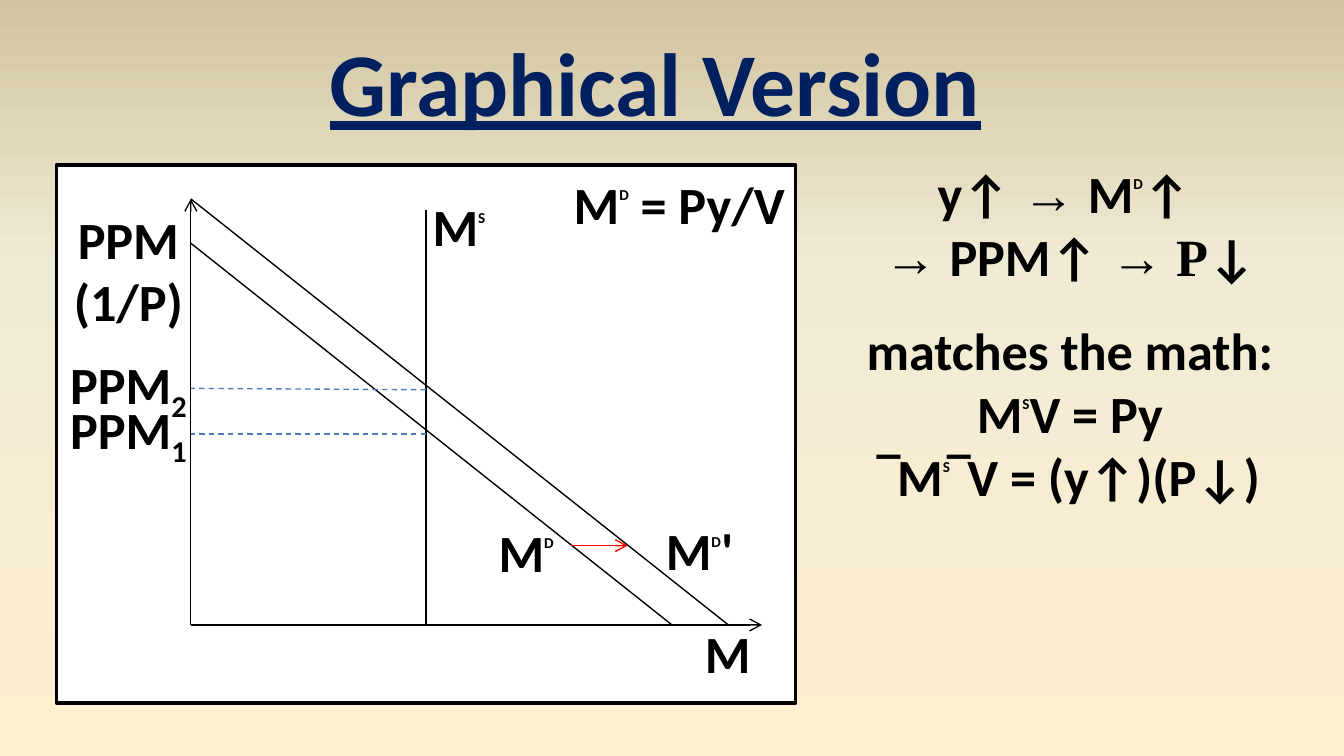
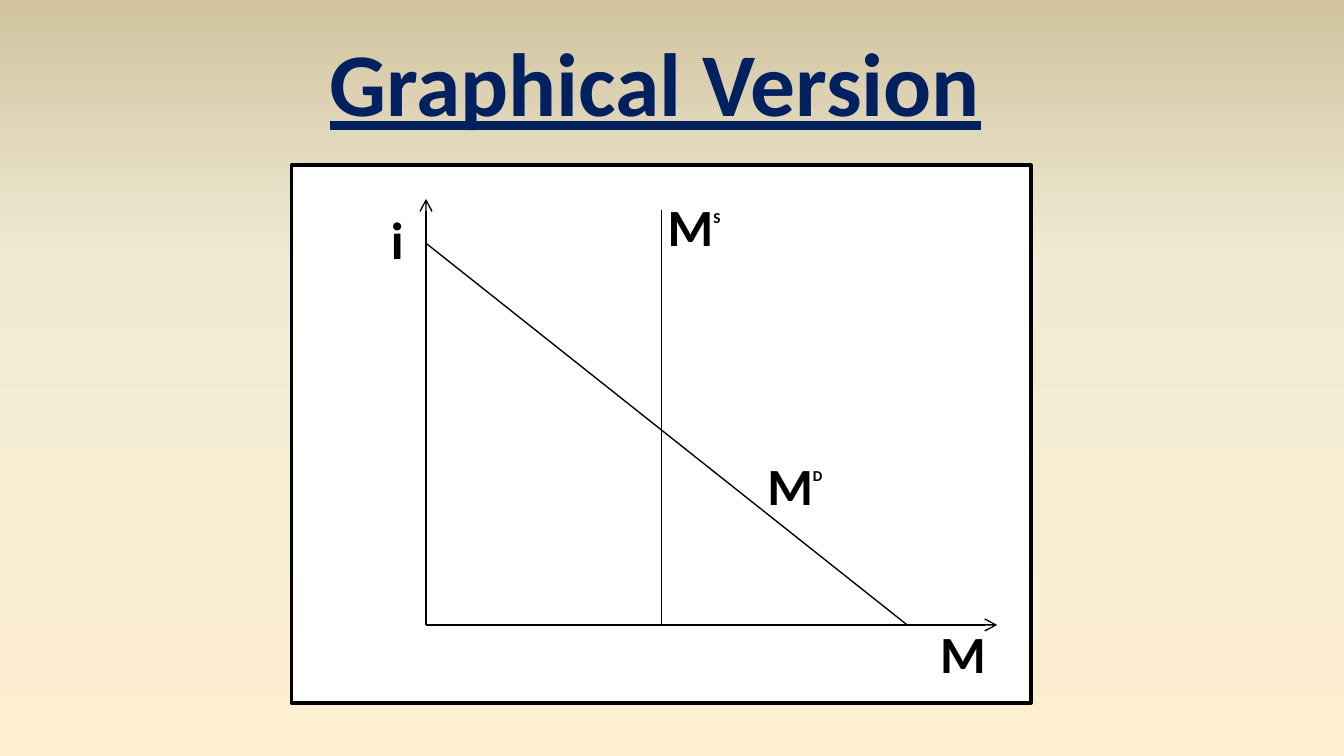
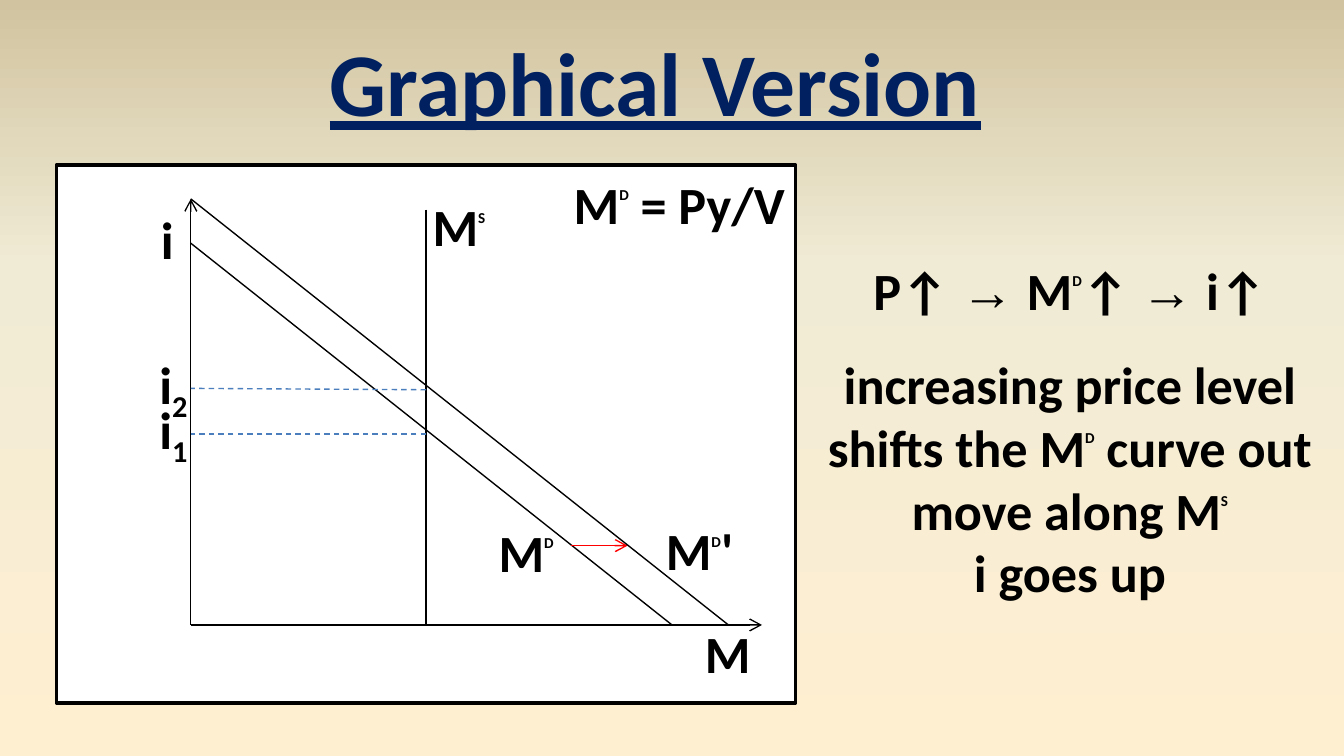
from copy import deepcopy

from pptx import Presentation
from pptx.dml.color import RGBColor
from pptx.enum import dml, shapes, text
from pptx.oxml.ns import qn
from pptx.util import Inches, Pt

NAVY = RGBColor(0x00, 0x20, 0x60)
BLACK = RGBColor(0x00, 0x00, 0x00)
WHITE = RGBColor(0xFF, 0xFF, 0xFF)
RED = RGBColor(0xFF, 0x00, 0x00)
BLUE = RGBColor(0x4B, 0x7E, 0xBC)
SAND = [(0, RGBColor(0xFF, 0xEF, 0xD1)), (0.65, RGBColor(0xF0, 0xEB, 0xD5)),
        (1, RGBColor(0xD1, 0xC3, 0x9F))]

WIDTH = Inches(10)
HEIGHT = WIDTH * 9 // 16

BODY = {"size": Pt(28), "name": "Calibri", "bold": True}
STYLES = {
    "body": (BODY, 0),
    "title": ({**BODY, "size": Pt(48), "underline": True}, 0),
    "serif": ({**BODY, "name": "Times New Roman"}, 0),
    "bar": ({**BODY, "name": "Arial"}, 0),
    "super": ({**BODY, "size": Pt(14)}, 90),
    "sub": (BODY, -25),
}
CENTER = text.PP_ALIGN.CENTER
GAP = Pt(17)

DEMAND = ["M", ("D", "super")]
SUPPLY = ["M", ("S", "super")]
ARROW = (" → ", "serif")
LEAD_ARROW = ("→ ", "serif")
OVERBAR = ("‾", "bar")

SLIDES = [
    {"left": 0.42, "axis": [["PPM"], ["(1/P)"]], "axis_width": 1.25,
     "level": "PPM", "level_width": 1.25, "demand_at": (3.16, 3.82), "notes_top": 1.15,
     "notes": [
         ["y↑", ARROW, *DEMAND, "↑ "],
         [LEAD_ARROW, "PPM↑", (" → P", "serif"), "↓"],
         ["matches the math:"],
         [*SUPPLY, "V = Py"],
         [OVERBAR, *SUPPLY, OVERBAR, "V = (y↑)(P↓)"],
     ], "gap_before": 2},
    {"left": 2.17, "axis": [["i"]], "axis_width": 0.75, "demand_at": (3.41, 3.32)},
    {"left": 0.42, "axis": [["i"]], "axis_width": 0.67,
     "level": "i", "level_width": 0.58, "demand_at": (3.16, 3.82), "notes_top": 1.87,
     "notes": [
         ["P↑", ARROW, *DEMAND, "↑ ", LEAD_ARROW, "i↑"],
         ["increasing price level"],
         ["shifts the M", ("D", "super"), " curve out"],
         ["move along ", *SUPPLY],
         ["i goes up"],
     ], "gap_before": 1},
]

AXIS_X, AXIS_Y, AXIS_TOP, AXIS_END = 1, 4.65, 1.48, 5.25
SUPPLY_X, LABEL_RIGHT = 2.75, 1.16
LABEL_HEIGHT = 0.57
CURVES = [
    ((SUPPLY_X, 1.56), (SUPPLY_X, AXIS_Y)),
    ((AXIS_X, 1.81), (4.58, AXIS_Y)),
]
AXES = [((AXIS_X, AXIS_Y), (AXIS_X, AXIS_TOP)), ((AXIS_X, AXIS_Y), (AXIS_END, AXIS_Y))]
SHIFTED_CURVE = ((AXIS_X, AXIS_TOP), (5, AXIS_Y))
SHIFT_ARROW = ((3.83, 4.06), (4.25, 4.06))
LEVELS = [("1", 2.91, 3.23, 3.23), ("2", 2.57, 2.9, 2.89)]


def apply(target, values):
    for key, value in values.items():
        setattr(target, key, value)


def write(parent, box, lines, align=CENTER, color=BLACK, wrap=True, gap_before=None):
    frame = parent.shapes.add_textbox(*map(Inches, box)).text_frame
    apply(frame, {"word_wrap": wrap, "auto_size": text.MSO_AUTO_SIZE.SHAPE_TO_FIT_TEXT})
    for index, line in enumerate(lines):
        paragraph = frame.add_paragraph() if index else frame.paragraphs[0]
        paragraph.alignment = align
        if index == gap_before:
            paragraph.space_before = GAP
        for part in line:
            words, style = (part, "body") if isinstance(part, str) else part
            values, baseline = STYLES[style]
            run = paragraph.add_run()
            run.text = words
            apply(run.font, values)
            run.font.color.rgb = color
            if baseline:
                run.font._element.set("baseline", str(baseline * 1000))


def draw(parent, left, ends, color=BLACK, arrow=False, dashed=False):
    (x1, y1), (x2, y2) = ends
    connector = parent.shapes.add_connector(
        shapes.MSO_CONNECTOR.STRAIGHT,
        *map(Inches, (left + x1, y1, left + x2, y2)))
    connector.line.color.rgb = color
    connector.line.width = Pt(0.75)
    if dashed:
        connector.line.dash_style = dml.MSO_LINE.DASH
    properties = connector._element.spPr
    if arrow:
        outline = properties.find(qn("a:ln"))
        outline.append(outline.makeelement(qn("a:tailEnd"), {"type": "arrow"}))
    properties.append(properties.makeelement(qn("a:effectLst"), {}))


def draw_graph(slide, content):
    left = content["left"]
    graph = slide.shapes.add_group_shape()
    panel = graph.shapes.add_shape(
        shapes.MSO_SHAPE.RECTANGLE, *map(Inches, (left, 1.23, 5.5, 4)))
    panel.shadow.inherit = False
    panel.fill.solid()
    panel.fill.fore_color.rgb = WHITE
    panel.line.color.rgb = BLACK
    panel.line.width = Pt(2)

    def label(x, y, width, lines, height=LABEL_HEIGHT):
        write(graph, (left + x, y, width, height), lines)

    width = content["axis_width"]
    label(LABEL_RIGHT - width, 1.49, width, content["axis"],
          LABEL_HEIGHT + 0.47 * (len(content["axis"]) - 1))
    for ends in CURVES:
        draw(graph, left, ends)
    for ends in AXES:
        draw(graph, left, ends, arrow=True)
    label(2.66, 1.4, 0.67, [SUPPLY])
    label(4.66, 4.57, 0.67, [["M"]])
    label(*content["demand_at"], 0.67, [DEMAND])

    if "level" in content:
        width = content["level_width"]
        for number, top, start, end in LEVELS:
            label(LABEL_RIGHT - width, top, width, [[content["level"], (number, "sub")]])
            draw(graph, left, ((SUPPLY_X, start), (AXIS_X, end)), BLUE, dashed=True)
        draw(graph, left, SHIFT_ARROW, RED, arrow=True)
        draw(graph, left, SHIFTED_CURVE)
        label(4.41, 3.81, 0.75, [[*DEMAND, "'"]])
        write(slide, (4.17, 1.23, 1.92, LABEL_HEIGHT), [[*DEMAND, " = Py/V"]],
              align=text.PP_ALIGN.LEFT)


def paint_background(master):
    fill = master.background.fill
    fill.gradient()
    fill.gradient_angle = 90
    stops = next(master.element.iter(qn("a:gsLst")))
    stops.insert(1, deepcopy(stops[0]))
    for stop, (position, color) in zip(fill.gradient_stops, SAND):
        stop.position = position
        stop.color.rgb = color


def main():
    deck = Presentation()
    apply(deck, {"slide_width": WIDTH, "slide_height": HEIGHT})
    paint_background(deck.slide_master)
    for content in SLIDES:
        slide = deck.slides.add_slide(deck.slide_layouts[6])
        write(slide, (2.33, 0.15, 5.09, 0.91), [[("Graphical Version", "title")]],
              color=NAVY, wrap=False)
        if "notes" in content:
            write(slide, (5.92, content["notes_top"], 4.08, 2.69), content["notes"],
                  gap_before=content["gap_before"])
        draw_graph(slide, content)
    deck.save("out.pptx")


if __name__ == "__main__":
    main()
